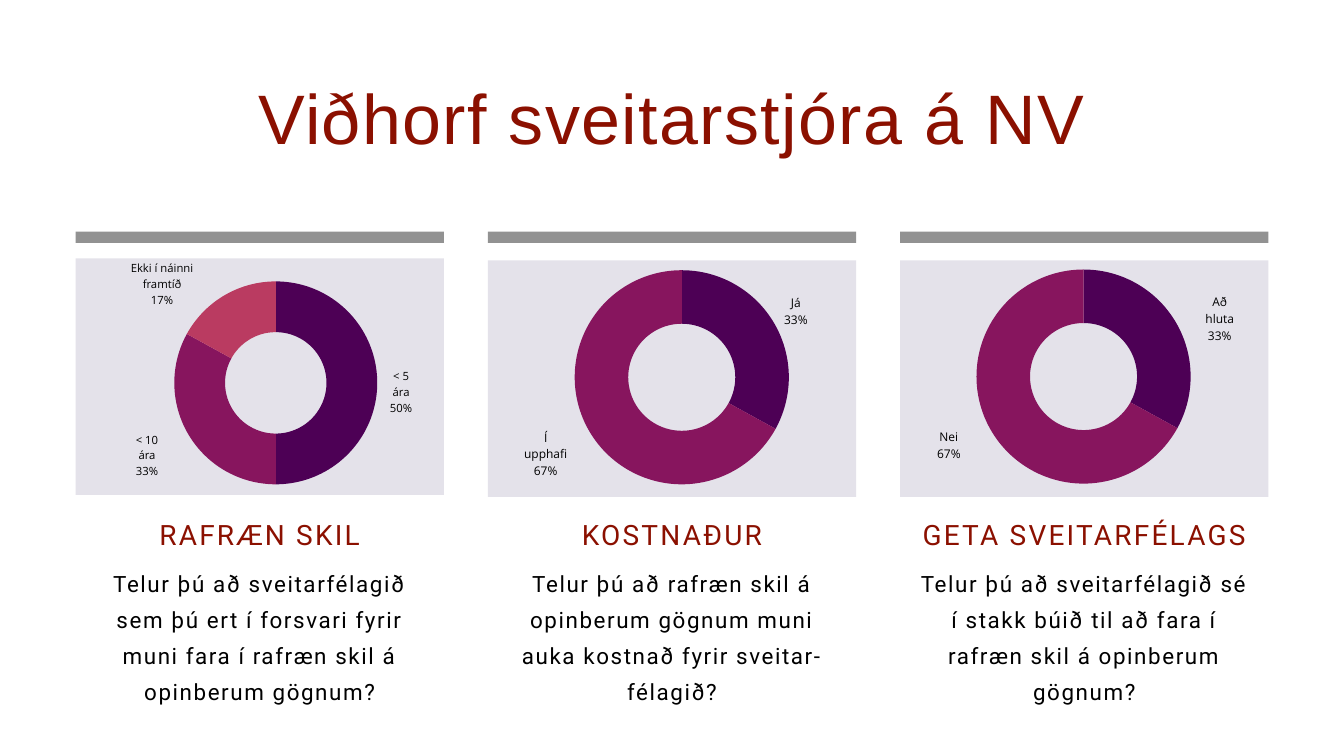
from lxml import etree
from pptx import Presentation
from pptx.chart.data import CategoryChartData
from pptx.dml.color import RGBColor
from pptx.enum.chart import XL_CHART_TYPE
from pptx.enum.shapes import MSO_SHAPE
from pptx.enum.text import MSO_ANCHOR, PP_ALIGN
from pptx.oxml import parse_xml
from pptx.oxml.ns import nsdecls, qn
from pptx.util import Pt

PX = 9525
CENTER = PP_ALIGN.CENTER
TOP = MSO_ANCHOR.TOP
RECTANGLE = MSO_SHAPE.RECTANGLE
DOUGHNUT = XL_CHART_TYPE.DOUGHNUT

RED, BLACK, GREY, PANEL = "8B1000", "000000", "929292", "E4E2EA"
SLICES = ["4D0055", "87155E", "BA3B61"]

COLUMN_LEFT, COLUMN_STEP, COLUMN_WIDTH = 108, 589, 526
TEXT_INSET = 20

# Ring: centre x, centre y, radius. Slices: answer, percent, label box.
COLUMNS = [
    {
        "heading": "RAFRÆN SKIL",
        "question": "Telur þú að sveitarfélagið sem þú ert í forsvari fyrir "
                    "muni fara í rafræn skil á opinberum gögnum?",
        "panel_top": 369, "ring": (394, 547, 145), "label_font": (12.1, 17),
        "slices": [("< 5 ára", 50, (548, 524, 50, 43)),
                   ("< 10 ára", 33, (180, 615, 60, 43)),
                   ("Ekki í náinni framtíð", 17, (161, 370, 141, 43))],
    },
    {
        "heading": "KOSTNAÐUR",
        "question": "Telur þú að rafræn skil á opinberum gögnum muni "
                    "auka kostnað fyrir sveitar-félagið?",
        "panel_top": 372, "ring": (974, 539, 153), "label_font": (12.8, 17.9),
        "slices": [("Já", 33, (1120, 419, 34, 46)),
                   ("Í upphafi", 67, (746, 611, 67, 46))],
    },
    {
        "heading": "GETA SVEITARFÉLAGS",
        "question": "Telur þú að sveitarfélagið sé í stakk búið til að "
                    "fara í rafræn skil á opinberum gögnum?",
        "panel_top": 372, "ring": (1548, 538, 153), "label_font": (12.8, 17.9),
        "slices": [("Að hluta", 33, (1711, 418, 63, 46)),
                   ("Nei", 67, (1324, 610, 63, 46))],
    },
]


def paint(fill, color):
    fill.solid()
    fill.fore_color.rgb = RGBColor.from_string(color)


def write(box, text, font, size, color, line, spacing=0):
    """Fill a box with centred text; line height and letter spacing in points."""
    frame = box.text_frame
    frame.text = text
    frame.word_wrap = True
    frame.vertical_anchor = TOP
    frame.margin_left = frame.margin_right = 0
    frame.margin_top = frame.margin_bottom = 0
    for para in frame.paragraphs:
        para.alignment = CENTER
        para.line_spacing = Pt(line)
        para.space_before = Pt(0)
        for span in para.runs:
            span.font.name = font
            span.font.size = Pt(size)
            span.font.color.rgb = RGBColor.from_string(color)
            span.font._element.set("spc", str(round(spacing * 100)))


deck = Presentation()
deck.slide_width, deck.slide_height = 1920 * PX, 1080 * PX
page = deck.slides.add_slide(deck.slide_layouts[5])
shapes = page.shapes

title = shapes.title
title.left, title.top, title.width, title.height = 212 * PX, 106 * PX, 1496 * PX, 122 * PX
write(title, "Viðhorf sveitarstjóra á NV", "Arial", 75, RED, 90, 1.5)

for index, column in enumerate(COLUMNS):
    left = COLUMN_LEFT + index * COLUMN_STEP

    for top, height, color in ((331, 16, GREY), (column["panel_top"], 338, PANEL)):
        block = shapes.add_shape(RECTANGLE, left * PX, top * PX, COLUMN_WIDTH * PX, height * PX)
        block.shadow.inherit = False
        paint(block.fill, color)
        block.line.fill.background()

    # Doughnut that fills its whole frame
    answers = CategoryChartData()
    answers.categories = [answer for answer, percent, place in column["slices"]]
    answers.add_series(column["heading"], [percent for answer, percent, place in column["slices"]])
    x, y, radius = column["ring"]
    chart = shapes.add_chart(DOUGHNUT, (x - radius) * PX, (y - radius) * PX,
                             2 * radius * PX, 2 * radius * PX, answers).chart
    chart.has_legend = False
    chart.has_title = False
    chart.font.name = "Open Sans"
    chart.font.size = Pt(column["label_font"][0])
    chart.plots[0].vary_by_categories = True
    for number in range(len(column["slices"])):
        piece = chart.plots[0].series[0].points[number].format
        paint(piece.fill, SLICES[number])
        piece.line.fill.background()

    chart_part = chart._chartSpace.find(qn("c:chart"))
    chart_part.addnext(parse_xml(
        f'<c:spPr {nsdecls("c", "a")}><a:noFill/><a:ln><a:noFill/></a:ln></c:spPr>'))
    plot_area = chart_part.find(qn("c:plotArea"))
    for old_layout in plot_area.findall(qn("c:layout")):
        plot_area.remove(old_layout)
    layout = etree.Element(qn("c:layout"))
    manual = etree.SubElement(layout, qn("c:manualLayout"))
    for tag, value in (("layoutTarget", "inner"), ("xMode", "edge"), ("yMode", "edge"),
                       ("x", "0"), ("y", "0"), ("w", "1"), ("h", "1")):
        etree.SubElement(manual, qn(f"c:{tag}")).set("val", value)
    plot_area.insert(0, layout)

    size, line = column["label_font"]
    for answer, percent, place in column["slices"]:
        label = shapes.add_textbox(*(length * PX for length in place))
        write(label, f"{answer}\n{percent}%", "Open Sans", size, BLACK, line)

    text_left, text_width = left + TEXT_INSET, COLUMN_WIDTH - 2 * TEXT_INSET
    heading = shapes.add_textbox(text_left * PX, 722 * PX, text_width * PX, 60 * PX)
    write(heading, column["heading"], "Roboto", 30, RED, 49.5, 2.4)
    question = shapes.add_textbox(text_left * PX, 802 * PX, text_width * PX, 200 * PX)
    write(question, column["question"], "Roboto", 24, BLACK, 38.4, 1.7)

deck.save("out.pptx")
